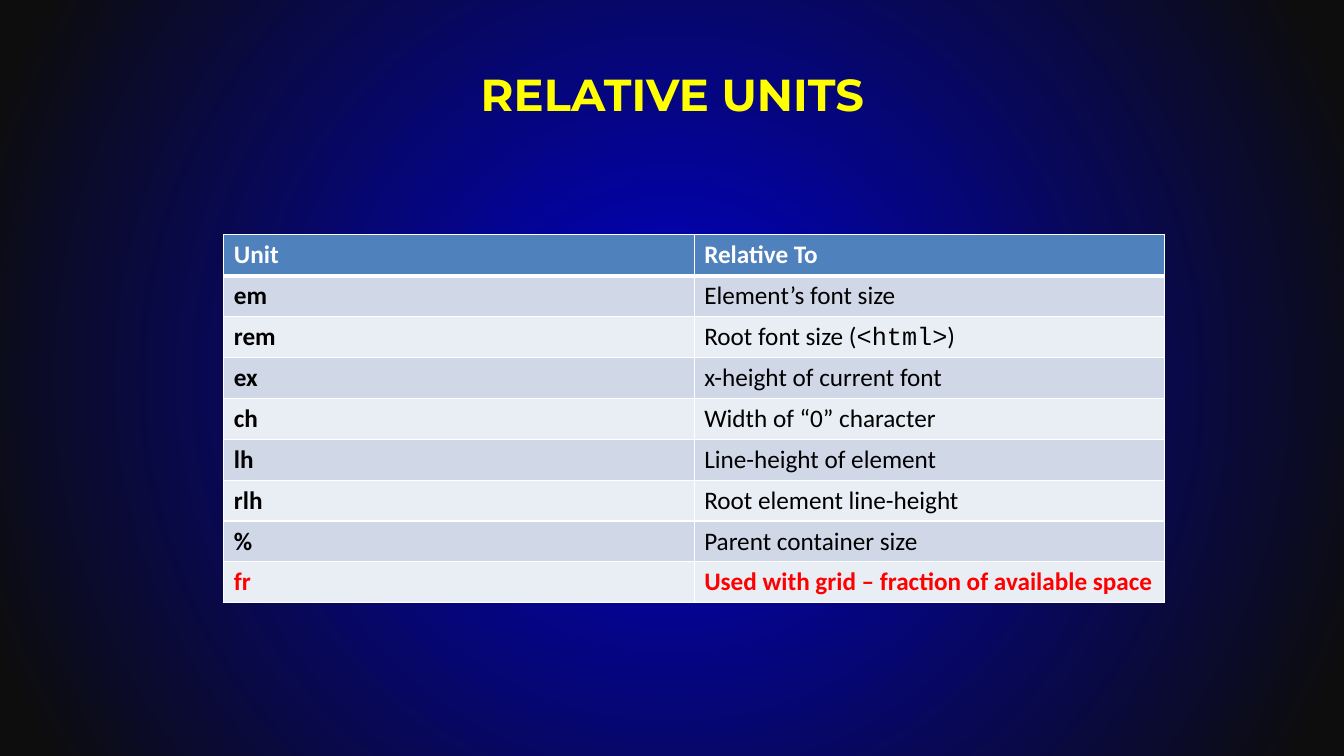
"""Build a slide with a table of the relative CSS units."""
from lxml import etree
from pptx import Presentation
from pptx.dml.color import RGBColor
from pptx.enum.text import MSO_ANCHOR, PP_ALIGN
from pptx.oxml.ns import qn
from pptx.util import Inches, Pt

MIDDLE = MSO_ANCHOR.MIDDLE
CENTER = PP_ALIGN.CENTER
HEADER_FILL = "4F81BD"
BAND_FILLS = ["E9EDF4", "D0D8E8"]
UNITS = [
    ("Unit", ["Relative To"]),
    ("em", ["Element’s font size"]),
    ("rem", ["Root font size (", "<html>", ")"]),
    ("ex", ["x-height of current font"]),
    ("ch", ["Width of “0” character"]),
    ("lh", ["Line-height of element"]),
    ("rlh", ["Root element line-height"]),
    ("%", ["Parent container size"]),
    ("fr", ["Used with grid – fraction of available space"]),
]
LAST_ROW = len(UNITS) - 1


def color(value):
    return RGBColor.from_string(value)


def add_border(cell, side, points):
    line = etree.SubElement(cell._tc.get_or_add_tcPr(), qn(f"a:ln{side}"), w=str(Pt(points)))
    fill = etree.SubElement(line, qn("a:solidFill"))
    etree.SubElement(fill, qn("a:srgbClr"), val="FFFFFF")


deck = Presentation()
deck.slide_width = Inches(13.33)
deck.slide_height = Inches(7.5)
page = deck.slides.add_slide(deck.slide_layouts[6])

background = page.background.fill
background.gradient()
for stop, (position, value) in zip(background.gradient_stops, [(0, "0000CC"), (0.95, "0D0D0D")]):
    stop.position = position
    stop.color.rgb = color(value)
gradient = page.element.find(f".//{qn('a:gradFill')}")
gradient.remove(gradient.find(qn("a:lin")))
circle = etree.SubElement(gradient, qn("a:path"), path="circle")
etree.SubElement(circle, qn("a:fillToRect"), l="50000", t="50000", r="50000", b="50000")

title = page.shapes.add_textbox(Inches(0.67), Inches(0.3), Inches(12), Inches(1.25))
title.text_frame.word_wrap = True
title.text_frame.vertical_anchor = MIDDLE
title.text_frame.text = "RELATIVE UNITS"
para = title.text_frame.paragraphs[0]
para.alignment = CENTER
font = para.runs[0].font
font.name = "Montserrat"
font.size = Pt(32)
font.bold = True
font.color.rgb = color("FFFF00")

table = page.shapes.add_table(
    len(UNITS), 2, Inches(2.22), Inches(2.33), Inches(9.33), Inches(3.65)
).table
for row, (unit, meaning) in enumerate(UNITS):
    if row == 0:
        fill_color, text_color = HEADER_FILL, "FFFFFF"
    else:
        fill_color = BAND_FILLS[row % 2]
        text_color = "FF0000" if row == LAST_ROW else "000000"
    for column, parts in enumerate([[unit], meaning]):
        cell = table.cell(row, column)
        cell.vertical_anchor = MIDDLE
        for side in "LRTB":
            under_header = (row, side) in [(0, "B"), (1, "T")]
            add_border(cell, side, 3 if under_header else 1)
        cell.fill.solid()
        cell.fill.fore_color.rgb = color(fill_color)
        para = cell.text_frame.paragraphs[0]
        for part in parts:
            span = para.add_run()
            span.text = part
            span.font.name = "Courier New" if part == "<html>" else "Calibri"
            span.font.size = Pt(18)
            span.font.bold = column == 0 or row in (0, LAST_ROW)
            span.font.color.rgb = color(text_color)

deck.save("out.pptx")
